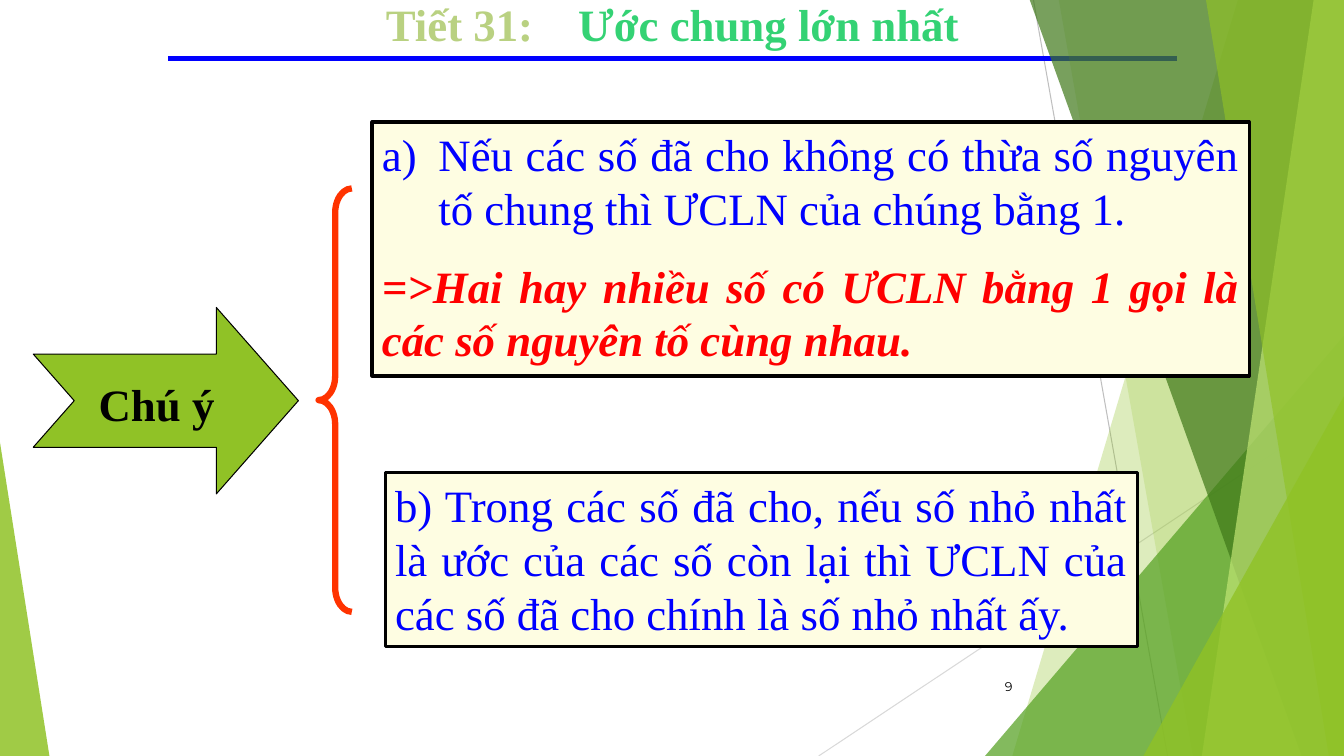
import pptx
import pptx.util
import pptx.dml.color
import pptx.enum.shapes
import pptx.enum.text
import pptx.oxml.ns
import lxml.etree

Inches = pptx.util.Inches
Pt = pptx.util.Pt
SHAPE = pptx.enum.shapes.MSO_SHAPE
ALIGN = pptx.enum.text.PP_ALIGN
ANCHOR = pptx.enum.text.MSO_ANCHOR
qn = pptx.oxml.ns.qn
WIDE, HIGH = 13.33, 7.5

deck = pptx.Presentation()
deck.slide_width = Inches(WIDE)
deck.slide_height = Inches(HIGH)
slide = deck.slides.add_slide(deck.slide_layouts[6])
shapes = slide.shapes


def paint(shape, fill=None, line=None, width=0.75, alpha=100):
    if fill:
        shape.fill.solid()
        shape.fill.fore_color.rgb = pptx.dml.color.RGBColor.from_string(fill)
        if alpha < 100:
            tint = shape.fill._xPr.find(qn("a:solidFill"))[0]
            lxml.etree.SubElement(tint, qn("a:alpha"), val=str(alpha * 1000))
    elif hasattr(shape, "fill"):
        shape.fill.background()
    if line:
        shape.line.color.rgb = pptx.dml.color.RGBColor.from_string(line)
        shape.line.width = Pt(width)
    else:
        shape.line.fill.background()
    if hasattr(shape, "shadow"):
        shape.shadow.inherit = False
    else:
        lxml.etree.SubElement(shape._element.spPr, qn("a:effectLst"))


def write(para, text, size=32, font="Times New Roman", color="000000",
          bold=False, italic=False, align=ALIGN.LEFT, before=0, gap=0):
    para.alignment = align
    para.space_before = Pt(before)
    run = para.add_run()
    run.text = text
    run.font.size = Pt(size)
    run.font.name = font
    run.font.bold = bold
    run.font.italic = italic
    run.font.color.rgb = pptx.dml.color.RGBColor.from_string(color)
    if gap:
        run.font._element.set("spc", str(gap * 100))


# Thin lines behind the shards, and the rule under the title
for x1, y1, x2, y2, color, width in [
    (10.25, 0, 11.58, HIGH, "BFBFBF", 0.75),
    (WIDE, 4.03, 8.12, HIGH, "D9D9D9", 0.75),
    (1.67, 0.58, 11.67, 0.58, "0000FF", 3),
]:
    line = shapes.add_connector(pptx.enum.shapes.MSO_CONNECTOR.STRAIGHT,
                                Inches(x1), Inches(y1), Inches(x2), Inches(y2))
    paint(line, line=color, width=width)

# Green shards: left end at top, left end at bottom, top
# A shard whose top is a single point on the right edge is a triangle
for top, base, y, color, alpha in [
    (12.28, 10.04, -0.01, "90C226", 30),
    (10.5, 11.83, -0.01, "90C226", 20),
    (WIDE, 9.77, 3.33, "54A021", 72),
    (10.21, 12.91, -0.01, "3F7819", 70),
    (13.03, 11.92, -0.01, "C0E474", 70),
    (11.96, 13.18, -0.01, "90C226", 65),
    (WIDE, 11.34, 3.93, "90C226", 80),
]:
    if top == WIDE:
        shard = shapes.add_shape(SHAPE.ISOSCELES_TRIANGLE, Inches(base), Inches(y),
                                 Inches(WIDE - base), Inches(HIGH - y))
        shard.adjustments[0] = 1
    else:
        pen = shapes.build_freeform(Inches(top), Inches(y))
        pen.add_line_segments([(Inches(WIDE), Inches(y)), (Inches(WIDE), Inches(HIGH)),
                               (Inches(base), Inches(HIGH))], close=True)
        shard = pen.convert_to_shape()
    paint(shard, color, alpha=alpha)

# Left wedge, arrow and brace
for kind, box, adjust, style in [
    (SHAPE.ISOSCELES_TRIANGLE, (0, 4.39, 0.49, 3.11), [0],
     {"fill": "90C226", "alpha": 85}),
    (SHAPE.NOTCHED_RIGHT_ARROW, (0.33, 3.05, 2.63, 1.85), [0.5, 0.44],
     {"fill": "90C226", "line": "000000"}),
    (SHAPE.LEFT_BRACE, (3.16, 1.87, 0.33, 4.2), [0.73, 0.5],
     {"line": "FF3300", "width": 4.5}),
]:
    mark = shapes.add_shape(kind, *[Inches(v) for v in box])
    for i, value in enumerate(adjust):
        mark.adjustments[i] = value
    paint(mark, **style)

# Text frames: title, arrow label, slide number, two notes
frames = {}
for name, box, noted in [
    ("title", (1.67, -0.08, 10, 0.63), False),
    ("label", (0.88, 3.69, 1.88, 0.64), False),
    ("number", (9.39, 6.61, 0.75, 0.4), False),
    ("first", (3.69, 1.21, 8.7, 2.52), True),
    ("second", (3.82, 4.69, 7.46, 1.72), True),
]:
    place = [Inches(v) for v in box]
    if noted:
        shape = shapes.add_shape(SHAPE.RECTANGLE, *place)
        paint(shape, "FEFDE2", "000000", 2.25)
    else:
        shape = shapes.add_textbox(*place)
    frame = shape.text_frame
    frame.word_wrap = True
    frame.vertical_anchor = ANCHOR.MIDDLE if name == "number" else ANCHOR.TOP
    frames[name] = frame

# Title, with one widened space between its parts
head = frames["title"].paragraphs[0]
for text, color, gap in [("Tiết 31:", "B9D181", 0), (" ", "B9D181", 24),
                         ("Ước chung lớn nhất", "34D274", 0)]:
    write(head, text, color=color, bold=True, align=ALIGN.CENTER, gap=gap)

# Arrow label and slide number
write(frames["label"].paragraphs[0], "Chú ý", bold=True)
write(frames["number"].paragraphs[0], "9", size=9, font="Montserrat", align=ALIGN.RIGHT)

# Notes a and b
item = frames["first"].paragraphs[0]
write(item, "Nếu các số đã cho không có thừa số nguyên tố chung thì ƯCLN của chúng bằng 1. ",
      color="0000FF", align=ALIGN.JUSTIFY)
props = item._p.get_or_add_pPr()
props.set("marL", str(Inches(0.56)))
props.set("indent", str(-Inches(0.56)))
lxml.etree.SubElement(props, qn("a:buFont"), typeface="Times New Roman")
lxml.etree.SubElement(props, qn("a:buAutoNum"), type="alphaLcParenR")
write(frames["first"].add_paragraph(),
      "=>Hai hay nhiều số có ƯCLN bằng 1 gọi là các số nguyên tố cùng nhau.",
      color="FF0000", bold=True, italic=True, align=ALIGN.JUSTIFY, before=17)
write(frames["second"].paragraphs[0],
      "b) Trong các số đã cho, nếu số nhỏ nhất là ước của các số còn lại thì ƯCLN "
      "của các số đã cho chính là số nhỏ nhất ấy.",
      color="0000FF", align=ALIGN.JUSTIFY)

deck.save("out.pptx")
